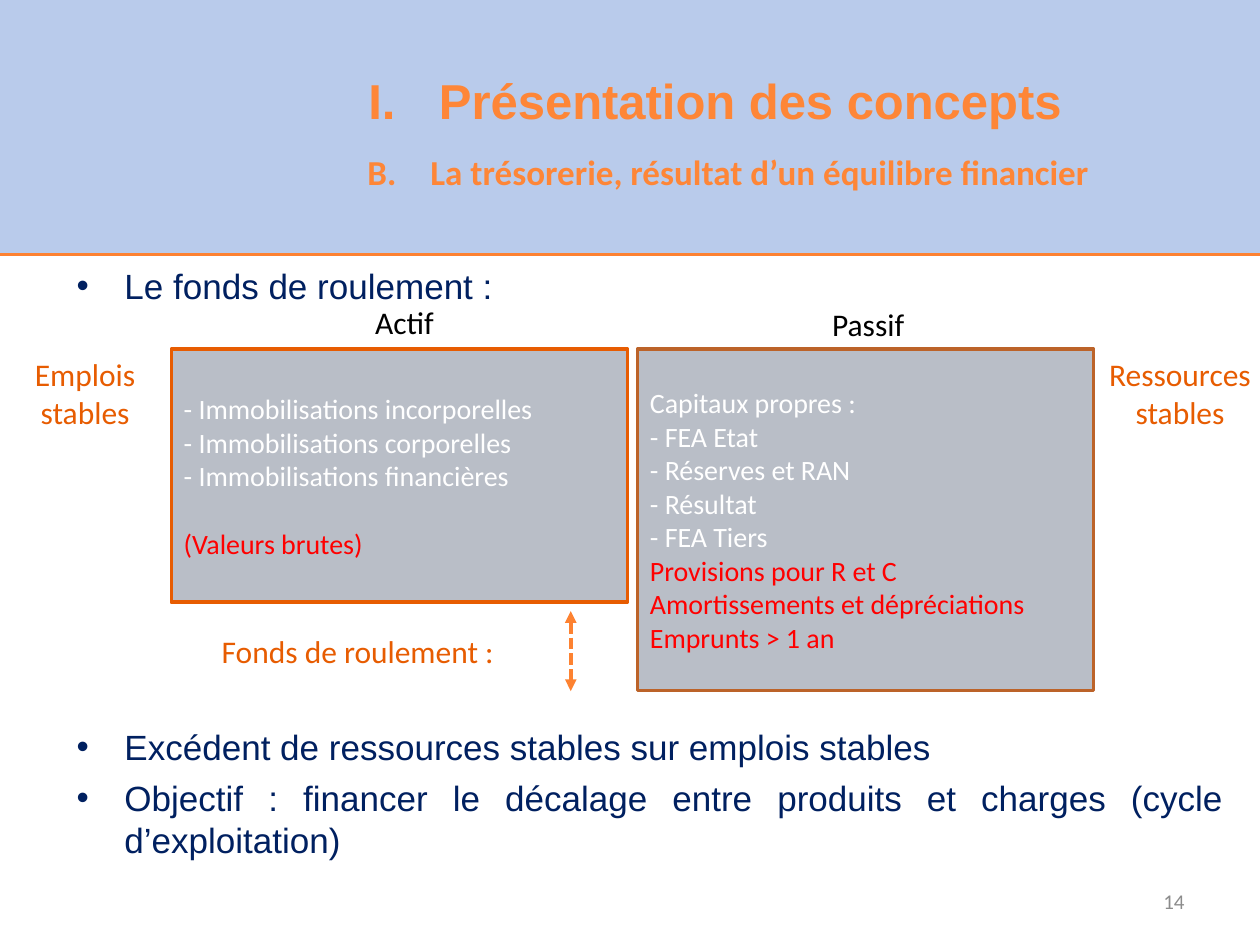
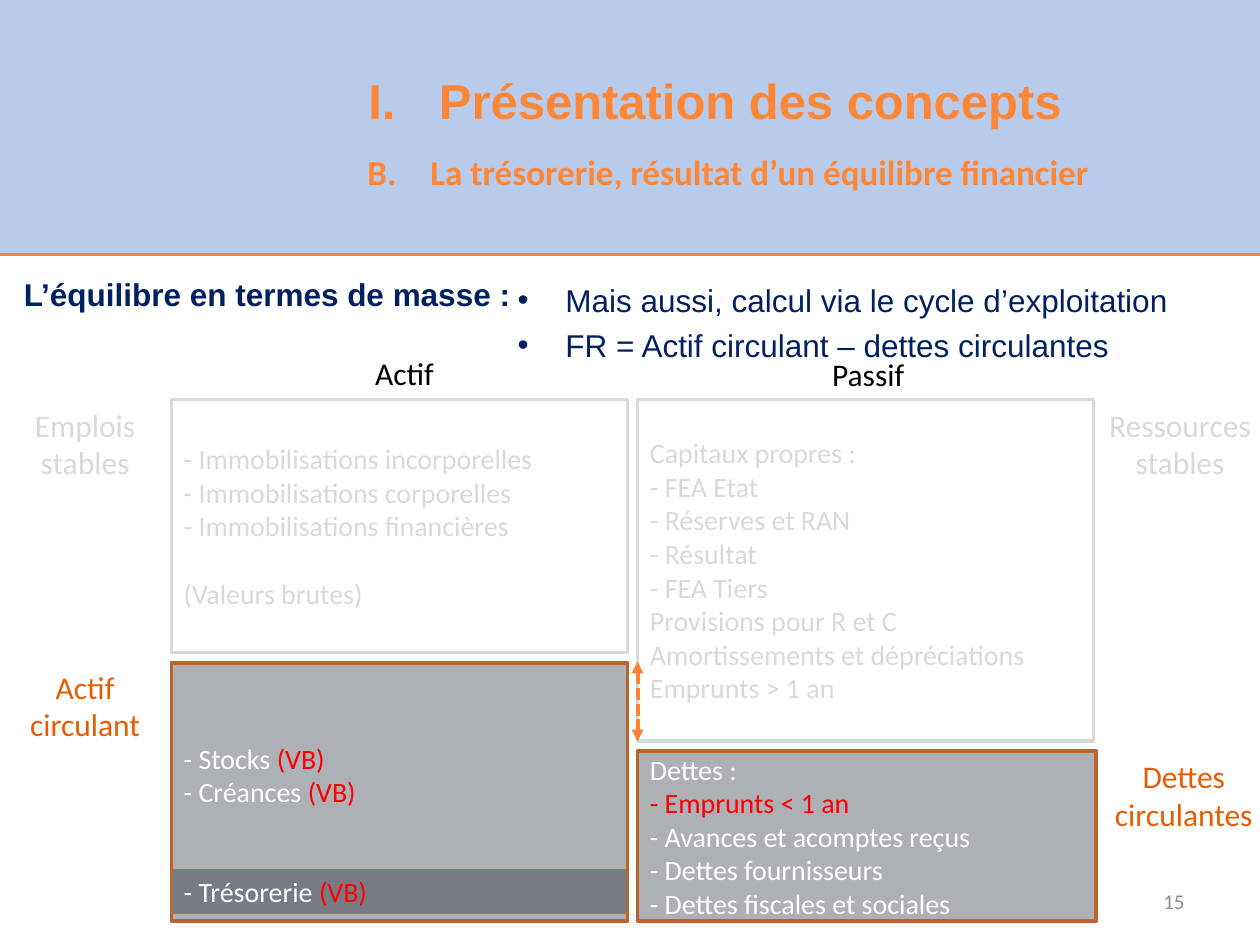
from dataclasses import dataclass

from lxml import etree
from pptx import Presentation
from pptx.dml.color import RGBColor
from pptx.enum.dml import MSO_LINE
from pptx.enum.shapes import MSO_CONNECTOR as Connector, MSO_SHAPE as Shape
from pptx.enum.text import MSO_ANCHOR as Anchor, PP_ALIGN as Align
from pptx.oxml.ns import qn
from pptx.util import Emu, Inches, Pt

# Grid: 100 columns by 75 rows on a 10 x 7.5 inch slide
COLS, ROWS = 100, 75
WIDTH, HEIGHT = Inches(10), Inches(7.5)

# Shared colours
BAND, RULE, TITLE = "7598D9", "FD8231", "FE8637"
NAVY, ACCENT, RUST, RED = "002060", "E75C01", "BC6329", "FF0000"
WHITE, BLACK, FADED, NUMBER = "FFFFFF", "000000", "D9D9D9", "8C8C8C"
STABLE, CURRENT, CASH = "B9BEC7", "ADB0B5", "777C84"

# Shared columns of the balance sheet
ASSETS_X, DEBTS_X, BLOCK_W, LABEL_W = 13.6, 50.6, 36.2, 13.5


def rgb(value):
    return RGBColor.from_string(value)


def col(n):
    return Emu(round(WIDTH * n / COLS))


def row(n):
    return Emu(round(HEIGHT * n / ROWS))


@dataclass
class Line:
    text: str
    color: str = ""
    note: str = ""      # red ending
    before: float = 0   # points


class Deck:
    heading, body = "Arial", "Calibri"

    def __init__(self):
        self.prs = Presentation()
        self.prs.slide_width, self.prs.slide_height = WIDTH, HEIGHT
        self.slide = None

    def new_slide(self, number):
        self.slide = self.prs.slides.add_slide(self.prs.slide_layouts[6])
        band = self.block(0, 0, COLS, 20.2, BAND)
        color = band.fill._xPr.find(qn("a:solidFill"))[0]
        etree.SubElement(color, qn("a:alpha"), val="50000")
        self.rule(0, 20.2, COLS, 20.2, 1.5)
        self.title()
        self.text(71.7, 69.5, 23.3, 4, [number], 12, NUMBER,
                  align=Align.RIGHT, anchor=Anchor.MIDDLE)

    def title(self):
        frame = self.text(14.6, 2.6, 84.3, 13.4,
                          ["Présentation des concepts",
                           "B.\tLa trésorerie, résultat d’un équilibre financier"],
                          20, TITLE, bold=True, align=Align.CENTER, anchor=Anchor.MIDDLE)
        section, part = frame.paragraphs
        section.line_spacing = part.line_spacing = 1.5
        section.runs[0].font.size = Pt(28)
        section.runs[0].font.name = self.heading
        self.indent(section, 5.6, -5.6)
        etree.SubElement(section._p.pPr, qn("a:buFont"), typeface="+mj-lt")
        etree.SubElement(section._p.pPr, qn("a:buAutoNum"), type="romanUcPeriod")
        self.indent(part, 2.1, 0)
        tabs = etree.SubElement(part._p.pPr, qn("a:tabLst"))
        etree.SubElement(tabs, qn("a:tab"), pos=str(col(10)), algn="l")

    def indent(self, paragraph, left, first):
        props = paragraph._p.get_or_add_pPr()
        props.set("marL", str(col(left)))
        props.set("indent", str(col(first)))

    def fill_text(self, frame, lines, size, color, font=None, bold=False,
                  align=Align.LEFT, anchor=Anchor.TOP):
        lines = [Line(item) if isinstance(item, str) else item for item in lines]
        frame.word_wrap = True
        frame.vertical_anchor = anchor
        frame.text = "\n".join(line.text for line in lines)
        for paragraph, line in zip(frame.paragraphs, lines):
            paragraph.alignment = align
            if line.before:
                paragraph.space_before = Pt(line.before)
            if line.note:
                paragraph.add_run().text = line.note
            for i, run in enumerate(paragraph.runs):
                run.font.size, run.font.bold = Pt(size), bold
                run.font.name = font or self.body
                run.font.color.rgb = rgb(RED if i else line.color or color)
        return frame

    def text(self, x, y, w, h, lines, size, color, **style):
        box = self.slide.shapes.add_textbox(col(x), row(y), col(w), row(h))
        return self.fill_text(box.text_frame, lines, size, color, **style)

    def label(self, x, y, w, words, color=ACCENT):
        self.text(x, y, w, 4, words, 18, color, align=Align.CENTER)

    def bullets(self, x, y, w, h, lines, size, align=Align.LEFT):
        frame = self.text(x, y, w, h, lines, size, NAVY, font=self.heading, align=align)
        for i, paragraph in enumerate(frame.paragraphs):
            self.indent(paragraph, 3.8, -3.8)
            etree.SubElement(paragraph._p.pPr, qn("a:buFont"), typeface=self.heading)
            etree.SubElement(paragraph._p.pPr, qn("a:buChar"), char="•")
            if i:
                paragraph.space_before = Pt(0.24 * size)

    def block(self, x, y, w, h, fill, edge=None, weight=2, lines=(), color=WHITE):
        shape = self.slide.shapes.add_shape(Shape.RECTANGLE, col(x), row(y), col(w), row(h))
        shape.shadow.inherit = False
        shape.fill.solid()
        shape.fill.fore_color.rgb = rgb(fill)
        if edge:
            shape.line.color.rgb = rgb(edge)
            shape.line.width = Pt(weight)
        else:
            shape.line.fill.background()
        if lines:
            self.fill_text(shape.text_frame, lines, 16, color, anchor=Anchor.MIDDLE)
        return shape

    def rule(self, x1, y1, x2, y2, weight):
        line = self.slide.shapes.add_connector(
            Connector.STRAIGHT, col(x1), row(y1), col(x2), row(y2))
        line.line.color.rgb = rgb(RULE)
        line.line.width = Pt(weight)
        etree.SubElement(line._element.spPr, qn("a:effectLst"))
        return line

    def gap_arrow(self, x, y):
        arrow = self.rule(x, y, x, y + 6.35, 2.25)
        arrow.line.dash_style = MSO_LINE.SQUARE_DOT
        for end in ("a:headEnd", "a:tailEnd"):
            etree.SubElement(arrow.line._ln, qn(end), type="triangle")

    def stable_part(self, top, faded=False):
        """Long-term half of the balance sheet, with its column heads."""
        fill = WHITE if faded else STABLE
        plain, strong = (FADED, FADED) if faded else (WHITE, RED)
        side = FADED if faded else ACCENT
        self.block(ASSETS_X, top, BLOCK_W, 20.1, fill, side, color=plain, lines=[
            "- Immobilisations incorporelles",
            "- Immobilisations corporelles",
            "- Immobilisations financières",
            Line("(Valeurs brutes)", strong, before=19.5)])
        self.block(DEBTS_X, top, BLOCK_W, 27.1, fill, FADED if faded else RUST,
                   color=plain, lines=[
            "Capitaux propres :", "- FEA Etat", "- Réserves et RAN",
            "- Résultat", "- FEA Tiers",
            Line("Provisions pour R et C", strong),
            Line("Amortissements et dépréciations", strong),
            Line("Emprunts > 1 an", strong)])
        self.label(24.6, top - 4.1, 15, ["Actif"], BLACK)
        self.label(61.4, top - 4, 15, ["Passif"], BLACK)
        self.label(0, top, LABEL_W, ["Emplois", "stables"], side)
        self.label(86.9, top, LABEL_W, ["Ressources", "stables"], side)


def working_capital(deck):
    deck.new_slide("14")
    deck.bullets(5.1, 20.5, 93, 5, ["Le fonds de roulement :"], 20)
    deck.stable_part(27.7)
    deck.gap_arrow(45.3, 48.5)
    deck.label(13.6, 49.7, 29.6, ["Fonds de roulement :"])
    deck.bullets(5.1, 57.1, 93, 14, [
        "Excédent de ressources stables sur emplois stables",
        "Objectif : financer le décalage entre produits et charges (cycle d’exploitation)",
    ], 20, Align.JUSTIFY)


def balance_by_mass(deck):
    deck.new_slide("15")
    deck.text(0.9, 21.3, 41.2, 5, ["L’équilibre en termes de masse :"], 18, NAVY,
              font=deck.heading, bold=True)
    deck.bullets(40.1, 21.8, 57.4, 9, [
        "Mais aussi, calcul via le cycle d’exploitation",
        "FR = Actif circulant – dettes circulantes"], 18)
    deck.stable_part(31.7, faded=True)

    # Short-term half
    assets = deck.block(ASSETS_X, 52.6, BLOCK_W, 20.5, CURRENT, RUST, lines=[
        Line("- Stocks ", note="(VB)"), Line("- Créances ", note="(VB)")])
    assets.text_frame.margin_bottom = row(3.2)
    deck.block(ASSETS_X, 69, BLOCK_W, 3.5, CASH, ACCENT, 0.25,
               [Line("- Trésorerie ", note="(VB)")])
    deck.block(DEBTS_X, 59.6, 36.4, 13.5, CURRENT, RUST, lines=[
        "Dettes :", Line("- Emprunts < 1 an", RED), "- Avances et acomptes reçus",
        "- Dettes fournisseurs", "- Dettes fiscales et sociales"])
    deck.label(0, 52.5, LABEL_W, ["Actif circulant"])
    deck.label(87.2, 59.6, LABEL_W, ["Dettes circulantes"])
    deck.gap_arrow(DEBTS_X, 52.5)


def main():
    deck = Deck()
    working_capital(deck)
    balance_by_mass(deck)
    deck.prs.save("out.pptx")


if __name__ == "__main__":
    main()
